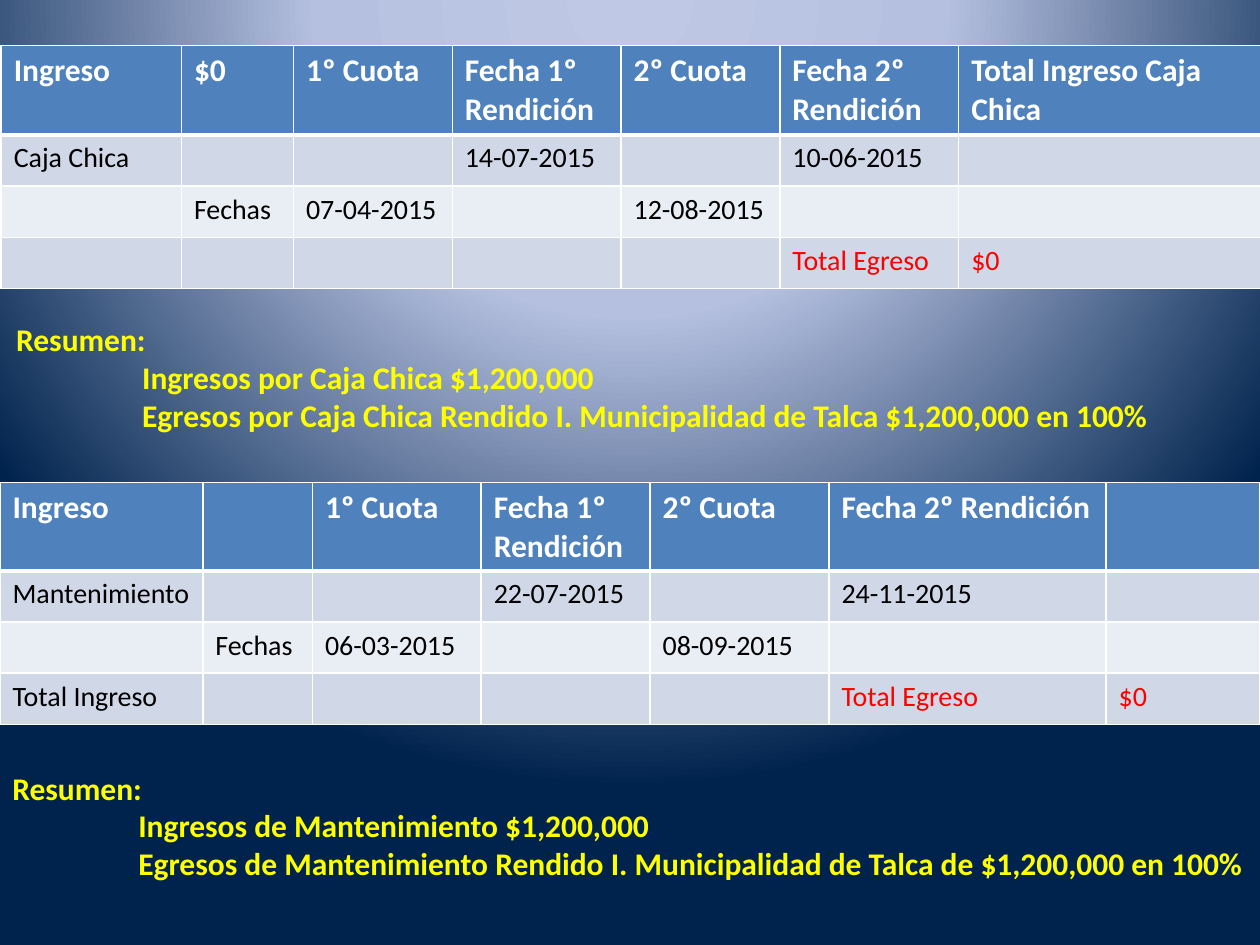
from pptx import Presentation
from pptx.dml.color import RGBColor as RGB
from pptx.oxml import parse_xml
from pptx.oxml.ns import nsdecls, qn
from pptx.util import Inches, Pt

WHITE = RGB(0xFF, 0xFF, 0xFF)
BLACK = RGB(0, 0, 0)
RED = RGB(0xFF, 0, 0)
YELLOW = RGB(0xFF, 0xFF, 0)
HEADER_BLUE = RGB(0x4F, 0x81, 0xBD)
BAND_DARK = RGB(0xD0, 0xD8, 0xE8)
BAND_LIGHT = RGB(0xE9, 0xED, 0xF4)
GRADIENT = [(0, RGB(0xBF, 0xC9, 0xE5)), (40, RGB(0xB5, 0xC0, 0xE0)),
            (100, RGB(0, 0x23, 0x4D))]

HEADER_FONT = dict(name="Calibri", size=Pt(18), bold=True)
BODY_FONT = dict(name="Calibri", size=Pt(16), bold=False)
TABLE_HEIGHT, HEADER_HEIGHT = 1.92, 0.7

PETTY_CASH = [
    ["Ingreso", "$0", "1º Cuota", "Fecha 1º Rendición", "2º Cuota",
     "Fecha 2º Rendición", "Total Ingreso Caja Chica"],
    ["Caja Chica", "", "", "14-07-2015", "", "10-06-2015", ""],
    ["", "Fechas", "07-04-2015", "", "12-08-2015", "", ""],
    ["", "", "", "", "", "Total Egreso", "$0"],
]
MAINTENANCE = [
    ["Ingreso", "", "1º Cuota", "Fecha 1º Rendición", "2º Cuota",
     "Fecha 2º Rendición", ""],
    ["Mantenimiento", "", "", "22-07-2015", "", "24-11-2015", ""],
    ["", "Fechas", "06-03-2015", "", "08-09-2015", "", ""],
    ["Total Ingreso", "", "", "", "", "Total Egreso", "$0"],
]


def set_background(s):
    """Fill the slide with a radial gradient."""
    s.background.fill.solid()
    bg = s.element.find(".//" + qn("p:bgPr"))
    stops = "".join(f'<a:gs pos="{pos * 1000}"><a:srgbClr val="{color}"/></a:gs>'
                    for pos, color in GRADIENT)
    bg.replace(bg[0], parse_xml(
        f'<a:gradFill {nsdecls("a")} rotWithShape="1"><a:gsLst>{stops}</a:gsLst>'
        '<a:path path="circle"><a:fillToRect l="50000" t="-80000" r="50000" '
        'b="180000"/></a:path></a:gradFill>'))


def format_font(font, color, values):
    for key, value in values.items():
        setattr(font, key, value)
    font.color.rgb = color


def set_borders(cell, top, bottom):
    """Draw white cell borders; top and bottom are widths in points."""
    tc_pr = cell._tc.get_or_add_tcPr()
    for side, width in zip("LRTB", (1, 1, top, bottom)):
        tc_pr.append(parse_xml(
            f'<a:ln{side} {nsdecls("a")} w="{Pt(width)}"><a:solidFill>'
            f'<a:srgbClr val="{WHITE}"/></a:solidFill></a:ln{side}>'))


def format_cell(cell, text, row, is_expense):
    is_header = row == 0
    set_borders(cell, 3 if row == 1 else 1, 3 if is_header else 1)
    cell.fill.solid()
    cell.fill.fore_color.rgb = (HEADER_BLUE if is_header else
                                BAND_DARK if row % 2 else BAND_LIGHT)
    p = cell.text_frame.paragraphs[0]
    p.text = text
    color = WHITE if is_header else RED if is_expense else BLACK
    for item in (p, *p.runs):
        format_font(item.font, color, HEADER_FONT if is_header else BODY_FONT)


def add_income_table(s, left, top, widths, rows):
    row_height = (TABLE_HEIGHT - HEADER_HEIGHT) / (len(rows) - 1)
    heights = [HEADER_HEIGHT] + [row_height] * (len(rows) - 1)
    table = s.shapes.add_table(
        len(rows), len(widths), Inches(left), Inches(top),
        Inches(sum(widths)), Inches(TABLE_HEIGHT)).table
    for column, width in zip(table.columns, widths):
        column.width = Inches(width)
    for i, (height, texts) in enumerate(zip(heights, rows)):
        table.rows[i].height = Inches(height)
        for j, text in enumerate(texts):
            is_expense = i == len(rows) - 1 and j >= len(widths) - 2
            format_cell(table.cell(i, j), text, i, is_expense)


def add_tab_stop(p, position):
    p._p.get_or_add_pPr().append(parse_xml(
        f'<a:tabLst {nsdecls("a")}><a:tab pos="{position}" algn="l"/></a:tabLst>'))


def add_summary(s, left, top, width, items):
    tf = s.shapes.add_textbox(Inches(left), Inches(top),
                              Inches(width), Inches(1.01)).text_frame
    tf.word_wrap = True
    lines = ["Resumen:"] + ["\t" + item for item in items]
    for i, line in enumerate(lines):
        p = tf.add_paragraph() if i else tf.paragraphs[0]
        add_tab_stop(p, Inches(1))
        r = p.add_run()
        r.text = line
        format_font(r.font, YELLOW, HEADER_FONT)


def main():
    prs = Presentation()
    prs.slide_width, prs.slide_height = Inches(10), Inches(7.5)
    s = prs.slides.add_slide(prs.slide_layouts[6])
    set_background(s)
    add_income_table(s, 0.01, 0.36,
                     [1.43, 0.89, 1.26, 1.34, 1.26, 1.42, 2.41], PETTY_CASH)
    add_summary(s, 0.03, 2.49, 9.64, [
        "Ingresos por Caja Chica $1,200,000",
        "Egresos por Caja Chica Rendido I. Municipalidad de Talca "
        "$1,200,000 en 100%"])
    add_income_table(s, 0, 3.83,
                     [1.61, 0.87, 1.34, 1.34, 1.42, 2.2, 1.22], MAINTENANCE)
    add_summary(s, 0, 6.05, 10, [
        "Ingresos de Mantenimiento $1,200,000",
        "Egresos de Mantenimiento Rendido I. Municipalidad de Talca de "
        "$1,200,000 en 100%"])
    prs.save("out.pptx")


if __name__ == "__main__":
    main()
